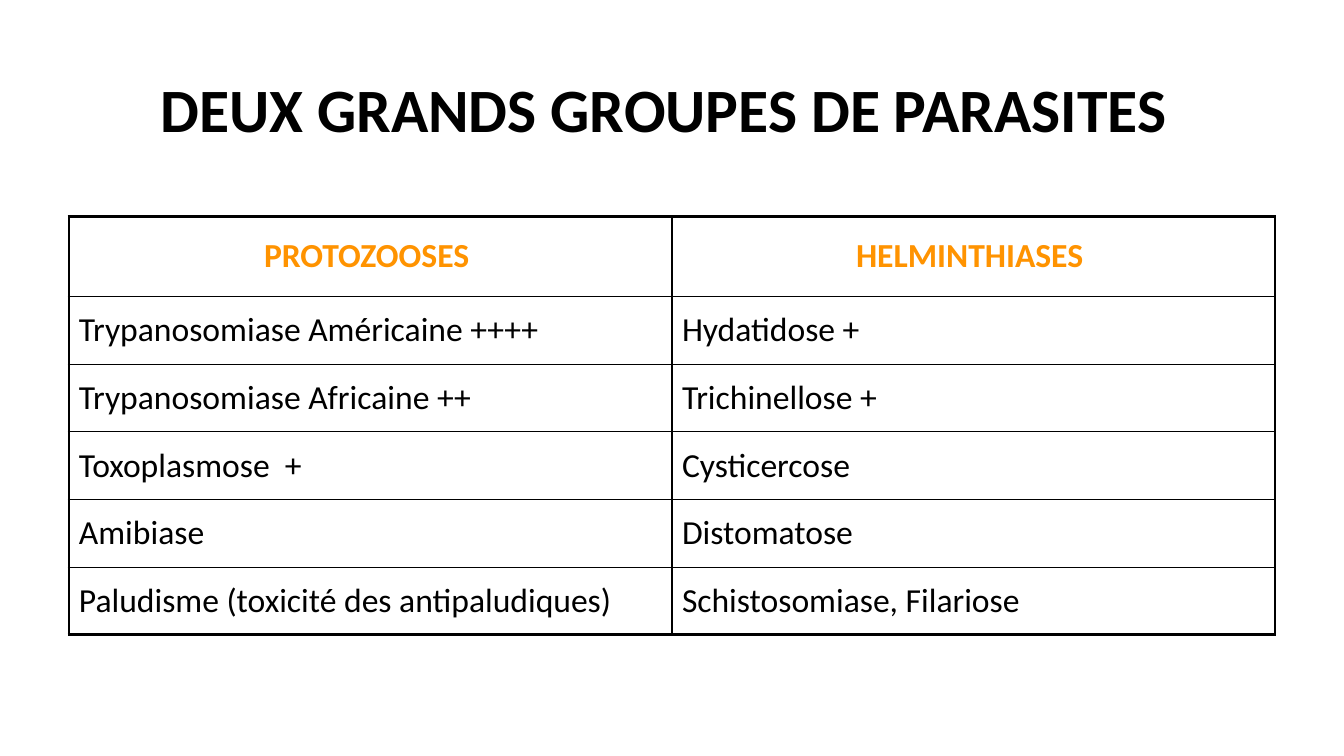
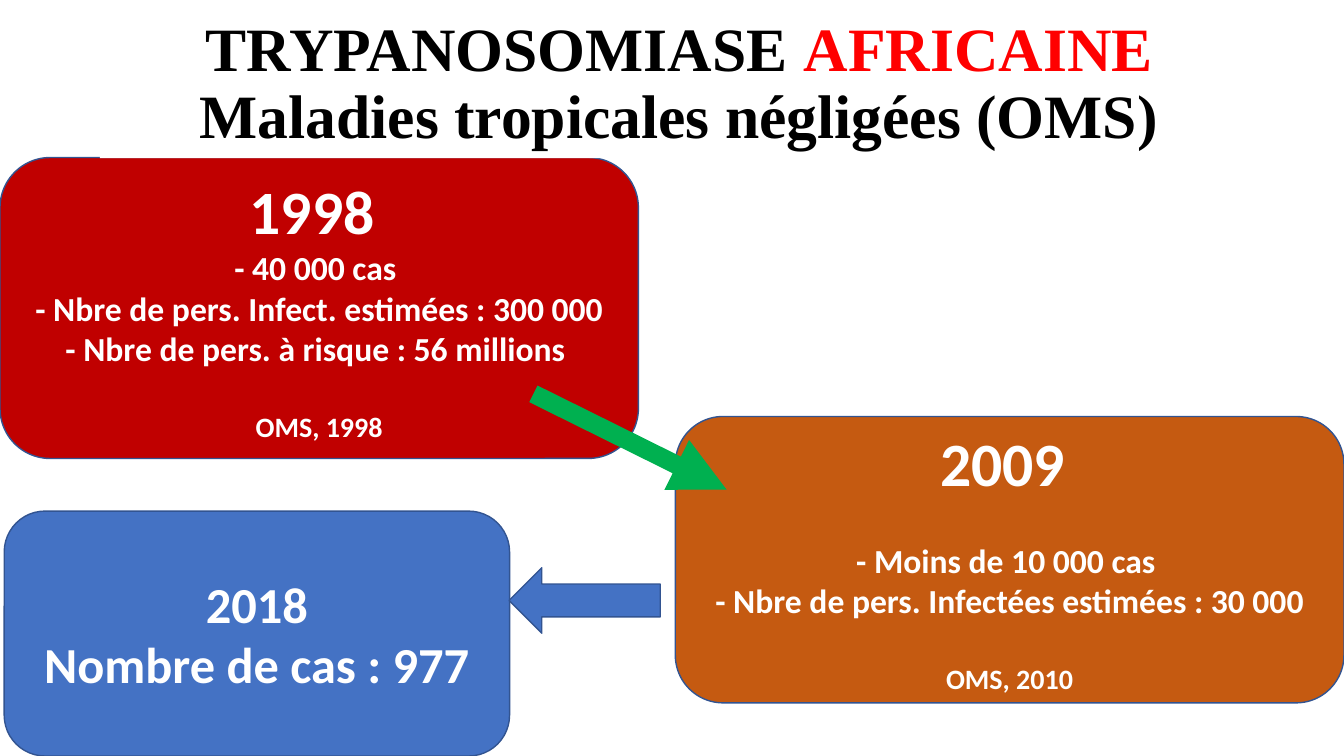
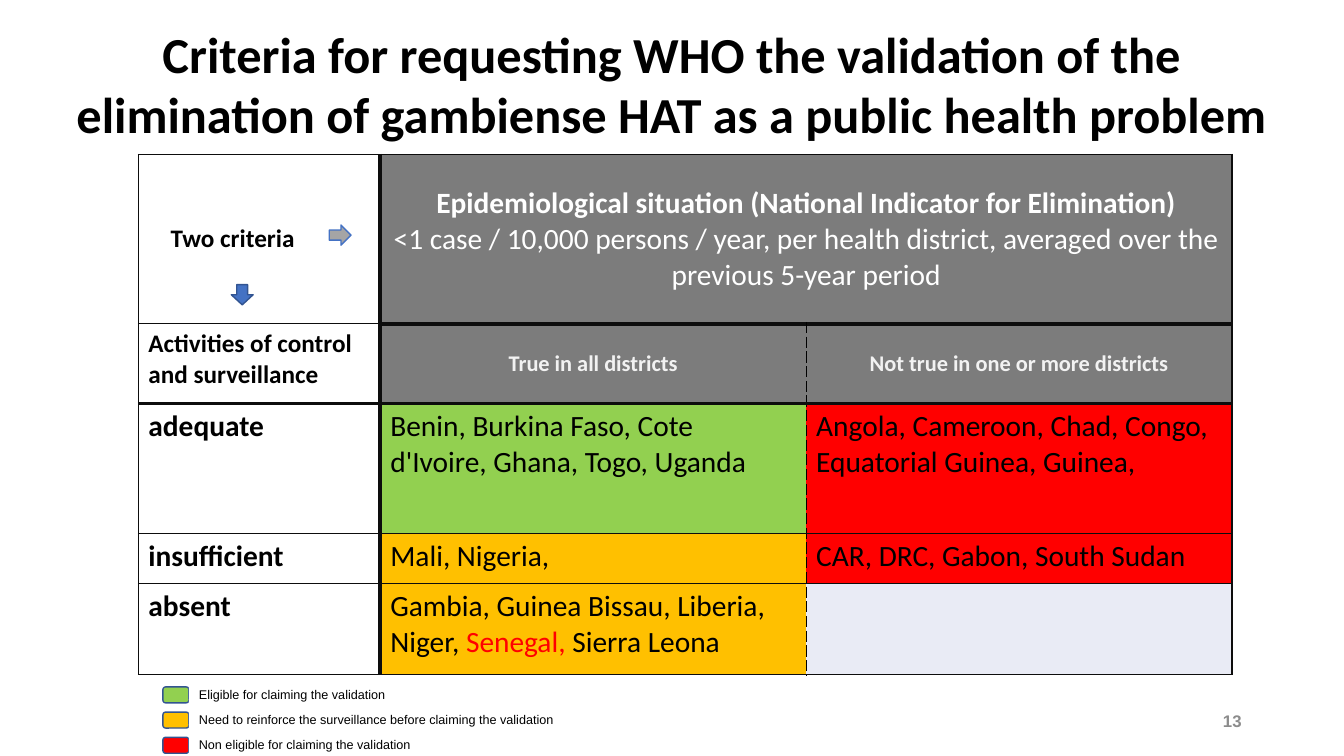
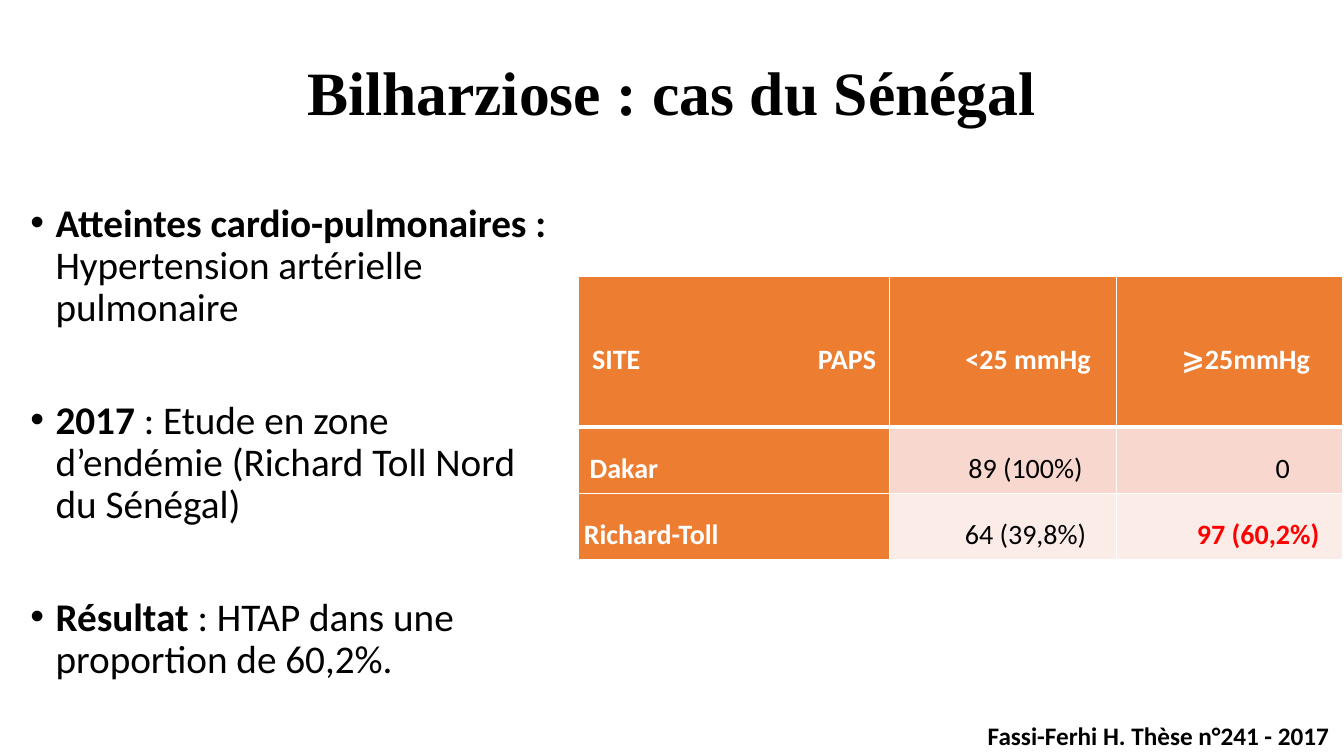
"""Build four slides on parasitic diseases."""
import dataclasses

import lxml.etree
import pptx
import pptx.dml.color
import pptx.enum.shapes
import pptx.enum.text
import pptx.oxml.ns
import pptx.util

Align = pptx.enum.text.PP_ALIGN
Anchor = pptx.enum.text.MSO_ANCHOR
Shape = pptx.enum.shapes.MSO_SHAPE


@dataclasses.dataclass(frozen=True)
class Theme:
    black: str = "000000"
    white: str = "FFFFFF"
    ink: str = "0D0D0D"
    outline: str = "325491"
    blue: str = "4472C4"
    silver: str = "A5A5A5"
    grey: str = "7C7C7C"
    number_grey: str = "8C8C8C"
    pale_grey: str = "F2F2F2"
    pale_blue: str = "E9EBF5"
    red: str = "FF0000"
    dark_red: str = "C00000"
    brown: str = "C55A11"
    arrow_green: str = "00B050"
    green: str = "92D050"
    amber: str = "FFC000"
    heading_orange: str = "FF9300"
    orange: str = "ED7D31"
    peach: str = "F8D7CE"
    pale_peach: str = "FCECE8"
    sans: str = "Calibri"
    serif: str = "Times New Roman"
    small_font: str = "Arial"
    title: float = 44
    subtitle: float = 36
    body: float = 28
    table: float = 24
    matrix: float = 21
    note: float = 20
    label: float = 18
    caption: float = 16
    number: float = 12
    legend: float = 9
    columns: int = 80


THEME = Theme()


@dataclasses.dataclass(frozen=True)
class Line:
    color: str
    width: float = 1
    dash: str = "solid"


@dataclasses.dataclass(frozen=True)
class Cell:
    content: object
    fill: str = THEME.white
    style: dict = dataclasses.field(default_factory=dict)
    anchor: object = Anchor.MIDDLE
    inset: tuple = (0.6, 0.3, 0.6, 0.3)
    span: int = 1
    top: object = None
    bottom: object = None


def rgb(color):
    return pptx.dml.color.RGBColor.from_string(color)


def add_xml(parent, tag, **attributes):
    name = pptx.oxml.ns.qn(tag)
    return lxml.etree.SubElement(parent, name, attributes)


def write(text_frame, content, **style):
    """Write paragraphs, each a text, a list of runs, or a (text, format) pair."""
    base = dict(size=THEME.label, font=THEME.sans, color=THEME.black, bold=False,
                align=Align.LEFT, spacing=1.0, before=0, bullet=None, tab=None)
    items = content if isinstance(content, list) else [content]
    for index, item in enumerate(items):
        text, own = item if isinstance(item, tuple) else (item, {})
        look = {**base, **style, **own}
        paragraph = text_frame.add_paragraph() if index else text_frame.paragraphs[0]
        properties = paragraph._p.get_or_add_pPr()
        if look["bullet"]:
            properties.set("marL", str(pptx.util.Inches(0.25)))
            properties.set("indent", str(-pptx.util.Inches(0.25)))
            add_xml(properties, "a:buFont", typeface=THEME.small_font)
            add_xml(properties, "a:buChar", char=look["bullet"])
        if look["tab"]:
            stops = add_xml(properties, "a:tabLst")
            add_xml(stops, "a:tab", pos=str(look["tab"]), algn="r")
        paragraph.alignment = look["align"]
        paragraph.line_spacing = look["spacing"]
        paragraph.space_before = pptx.util.Pt(look["before"])
        for part, change in text if isinstance(text, list) else [(text, {})]:
            if part == "\n":
                paragraph.add_line_break()
                continue
            run = paragraph.add_run()
            run.text = part
            form = {**look, **change}
            run.font.name = form["font"]
            run.font.size = pptx.util.Pt(form["size"])
            run.font.bold = form["bold"]
            run.font.color.rgb = rgb(form["color"])


class Deck:
    """Hold the presentation, its grid and the current slide."""

    def __init__(self):
        self.presentation = pptx.Presentation()
        self.presentation.slide_width = pptx.util.Inches(13.33)
        self.presentation.slide_height = pptx.util.Inches(7.5)
        self.unit = self.presentation.slide_width / THEME.columns
        self.slide = None

    def grid(self, *lengths):
        return [pptx.util.Emu(round(length * self.unit)) for length in lengths]

    def new_slide(self):
        layout = self.presentation.slide_layouts.get_by_name("Title Only")
        self.slide = self.presentation.slides.add_slide(layout)

    def title(self, content, place, anchor=Anchor.MIDDLE, **style):
        """Place the title in front of what is already on the slide."""
        title = self.slide.shapes.title
        title.left, title.top, title.width, title.height = self.grid(*place)
        title.fill.solid()
        title.fill.fore_color.rgb = rgb(THEME.white)
        title.text_frame.auto_size = pptx.enum.text.MSO_AUTO_SIZE.NONE
        title.text_frame.vertical_anchor = anchor
        form = dict(size=THEME.title, bold=True, align=Align.CENTER)
        write(title.text_frame, content, **{**form, **style})
        title.element.getparent().append(title.element)

    def text(self, content, place, anchor=Anchor.TOP, fill=None, **style):
        box = self.slide.shapes.add_textbox(*self.grid(*place))
        if fill:
            box.fill.solid()
            box.fill.fore_color.rgb = rgb(fill)
        box.text_frame.word_wrap = True
        box.text_frame.vertical_anchor = anchor
        write(box.text_frame, content, **style)

    def shape(self, kind, place, fill, content=None, line=THEME.outline, **style):
        shape = self.slide.shapes.add_shape(kind, *self.grid(*place))
        shape.shadow.inherit = False
        shape.fill.solid()
        shape.fill.fore_color.rgb = rgb(fill)
        shape.line.color.rgb = rgb(line)
        shape.line.width = pptx.util.Pt(1)
        if content:
            shape.text_frame.word_wrap = True
            shape.text_frame.vertical_anchor = Anchor.MIDDLE
            write(shape.text_frame, content, color=THEME.white, bold=True,
                  align=Align.CENTER, **style)

    def arrow(self, ends, color, width):
        straight = pptx.enum.shapes.MSO_CONNECTOR.STRAIGHT
        arrow = self.slide.shapes.add_connector(straight, *self.grid(*ends))
        arrow.line.color.rgb = rgb(color)
        arrow.line.width = pptx.util.Pt(width)
        add_xml(arrow.line._get_or_add_ln(), "a:tailEnd", type="triangle")
        add_xml(arrow.element.spPr, "a:effectLst")

    def table(self, corner, widths, heights, rows, across, down):
        """Add a table ruled by the lines across and down, edges included."""
        size = (sum(widths), sum(heights))
        frame = self.slide.shapes.add_table(len(heights), len(widths),
                                            *self.grid(*corner, *size))
        table = frame.table
        table.first_row = table.horz_banding = False
        for column, width in zip(table.columns, self.grid(*widths)):
            column.width = width
        for row, height in zip(table.rows, self.grid(*heights)):
            row.height = height
        for row, cells in enumerate(rows):
            column = 0
            for cell in cells:
                end = column + cell.span
                target = table.cell(row, column)
                if cell.span > 1:
                    target.merge(table.cell(row, end - 1))
                self.fill_cell(target, cell)
                self.rule_cell(target, L=down[column], R=down[end],
                               T=cell.top or across[row],
                               B=cell.bottom or across[row + 1])
                column = end

    def fill_cell(self, target, cell):
        target.fill.solid()
        target.fill.fore_color.rgb = rgb(cell.fill)
        target.vertical_anchor = cell.anchor
        (target.margin_left, target.margin_top,
         target.margin_right, target.margin_bottom) = self.grid(*cell.inset)
        if cell.content:
            write(target.text_frame, cell.content, **cell.style)

    def rule_cell(self, target, **lines):
        properties = target._tc.get_or_add_tcPr()
        for index, (side, line) in enumerate(lines.items()):
            border = add_xml(properties, f"a:ln{side}", w=str(pptx.util.Pt(line.width)))
            add_xml(add_xml(border, "a:solidFill"), "a:srgbClr", val=line.color)
            add_xml(border, "a:prstDash", val=line.dash)
            properties.insert(index, border)


def parasite_groups(deck):
    deck.new_slide()
    deck.title("DEUX GRANDS GROUPES DE PARASITES ", (8.2, 3.95, 63.5, 5), Anchor.TOP)
    heading = dict(size=THEME.table, color=THEME.heading_orange, bold=True,
                   align=Align.CENTER)
    diseases = [
        ("Trypanosomiase Américaine ++++", "Hydatidose +"),
        ("Trypanosomiase Africaine ++", "Trichinellose +"),
        ("Toxoplasmose  +", "Cysticercose"),
        ("Amibiase", "Distomatose"),
        ("Paludisme (toxicité des antipaludiques)", "Schistosomiase, Filariose"),
    ]
    rows = [[Cell(name, style=heading) for name in ("PROTOZOOSES ", "HELMINTHIASES ")]]
    rows += [[Cell(name, style=dict(size=THEME.table)) for name in pair]
             for pair in diseases]
    edge, inner = Line(THEME.black, 2.25), Line(THEME.black)
    deck.table((4.1, 12.9), [35.9] * 2, [4.75] + [4.03] * 5, rows,
               across=[edge] + [inner] * 5 + [edge], down=[edge, inner, edge])


def african_trypanosomiasis(deck):
    deck.new_slide()
    year, blank_line = dict(size=THEME.title), 29.3
    source = dict(size=THEME.note, before=blank_line)
    deck.shape(Shape.ROUNDED_RECTANGLE, (0, 9.38, 38, 17.92), THEME.dark_red, [
        ("1998 ", year),
        "- 40 000 cas ",
        "- Nbre de pers. Infect. estimées : 300 000",
        "- Nbre de pers. à risque : 56 millions ",
        ("OMS, 1998", source),
    ], size=THEME.table)
    deck.shape(Shape.ROUNDED_RECTANGLE, (40.2, 24.8, 39.8, 17.05), THEME.brown, [
        ("2009 ", year),
        ("- Moins de 10 000 cas ", dict(before=blank_line)),
        "- Nbre de pers. Infectées estimées : 30 000",
        ("OMS, 2010", source),
    ], size=THEME.table)
    deck.arrow((31.75, 23.45, 43.25, 29.15), THEME.arrow_green, 13.25)
    deck.title([([
        ("TRYPANOSOMIASE ", {}),
        ("AFRICAINE", dict(color=THEME.red)),
        ("\n", {}),
        ("Maladies tropicales négligées (OMS)", {}),
    ], {})], (5.95, 0.72, 69, 8.7), font=THEME.serif, spacing=0.9)
    deck.shape(Shape.ROUNDED_RECTANGLE, (0.25, 30.43, 30.08, 14.58), THEME.blue,
               ["2018", "Nombre de cas : 977"], size=THEME.subtitle)
    deck.shape(Shape.LEFT_ARROW, (30.3, 33.8, 9, 3.9), THEME.blue)


def elimination_criteria(deck):
    deck.new_slide()
    deck.title("Criteria for requesting WHO the validation of the elimination of "
               "gambiense HAT as a public health problem",
               (3.55, 1.07, 72.9, 7.9), Anchor.TOP, size=THEME.subtitle)
    thin, thick = Line(THEME.ink), Line(THEME.ink, 3)
    dashed = Line(THEME.black, 1, "sysDash")
    label = dict(size=THEME.label, bold=True)
    status = dict(size=THEME.matrix, bold=True)
    countries = dict(size=THEME.matrix)
    district = dict(size=THEME.caption, bold=True, color=THEME.pale_grey,
                    align=Align.CENTER)
    indicator = dict(size=THEME.matrix, color=THEME.white, align=Align.CENTER)
    rows = [
        [Cell("Two criteria", style=label, inset=(1.92, 0.3, 0.6, 0.3), bottom=thin),
         Cell([("Epidemiological situation (National Indicator for Elimination)",
                dict(bold=True)),
               "<1 case / 10,000 persons / year, per health district, "
               "averaged over the previous 5-year period"],
              THEME.grey, indicator, span=2)],
        [Cell("Activities of control and surveillance", style=label,
              anchor=Anchor.TOP, top=thin),
         Cell("True in all districts", THEME.grey, district),
         Cell("Not true in one or more districts", THEME.grey, district)],
    ]
    senegal = [([("Gambia, Guinea Bissau, Liberia, Niger, ", {}),
                 ("Senegal,", dict(color=THEME.red)),
                 (" Sierra Leona", {})], {})]
    findings = [
        ("adequate",
         "Benin, Burkina Faso, Cote d'Ivoire, Ghana, Togo, Uganda", THEME.green,
         "Angola, Cameroon, Chad, Congo, Equatorial Guinea, Guinea,", THEME.red),
        ("insufficient", "Mali, Nigeria,", THEME.amber,
         "CAR, DRC, Gabon, South Sudan", THEME.red),
        ("absent", senegal, THEME.amber, "", THEME.pale_blue),
    ]
    for name, true_in, true_fill, not_true, not_fill in findings:
        rows.append([Cell(name, style=status, anchor=Anchor.TOP),
                     Cell(true_in, true_fill, countries, Anchor.TOP),
                     Cell(not_true, not_fill, countries, Anchor.TOP)])
    deck.table((8.24, 9.2), [14.4, 25.35, 25.35], [10.08, 4.75, 7.72, 3, 5.4], rows,
               across=[thin, thick, thick, thin, thin, thin],
               down=[thin, thick, dashed, thin])
    deck.shape(Shape.RIGHT_ARROW, (19.6, 13.4, 1.3, 1.2), THEME.silver, line=THEME.blue)
    deck.shape(Shape.DOWN_ARROW, (13.77, 16.95, 1.3, 1.2), THEME.blue)
    legend = [
        (THEME.green, "Eligible for claiming the validation", 12.5),
        (THEME.amber, "Need to reinforce the surveillance before claiming the validation",
         24),
        (THEME.red, "Non eligible for claiming the validation", 16.7),
    ]
    for index, (color, meaning, width) in enumerate(legend):
        top = 40.6 + 1.5 * index
        deck.shape(Shape.ROUNDED_RECTANGLE, (9.7, top + 0.3, 1.55, 0.95), color)
        deck.text(meaning, (11.25, top, width, 1.45), fill=THEME.white,
                  size=THEME.legend, font=THEME.small_font)
    deck.text("13", (56.5, 41.7, 18, 2.4), Anchor.MIDDLE, size=THEME.number,
              font=THEME.small_font, color=THEME.number_grey, bold=True,
              align=Align.RIGHT)


def bilharzia_in_senegal(deck):
    deck.new_slide()
    deck.title("Bilharziose : cas du Sénégal", (16.2, 2.43, 47.6, 6.55),
               font=THEME.serif, spacing=0.9)
    strong = dict(bold=True)
    points = [
        ("Atteintes cardio-pulmonaires : ", "Hypertension artérielle pulmonaire"),
        ("2017", " : Etude en zone d’endémie (Richard Toll Nord du Sénégal)"),
        ("Résultat", " : HTAP dans une proportion de 60,2%."),
    ]
    deck.text([([(lead, strong), (rest, {})], dict(before=50 if index else 0))
               for index, (lead, rest) in enumerate(points)],
              (1.22, 11.8, 32.9, 30.85), fill=THEME.white, size=THEME.body,
              spacing=0.9, bullet="•")
    deck.text("Fassi-Ferhi H. Thèse n°241 - 2017", (58.2, 42.6, 21.8, 2.4),
              fill=THEME.white, bold=True)

    plain = dict(size=THEME.note, spacing=1.5)
    heading = dict(plain, bold=True, color=THEME.white)
    centred = dict(align=Align.CENTER)
    tab = deck.grid(16.9)[0]
    thin, thick = Line(THEME.white), Line(THEME.white, 3)

    def entry(text, fill, style, left, top=thin):
        return Cell(text, fill, style, inset=(left, 0, 0.3, 0), top=top)

    rows = [
        [entry("SITE\tPAPS", THEME.orange, dict(heading, tab=tab), 0.8),
         entry("<25 mmHg", THEME.orange, {**heading, **centred}, 3.3),
         entry("⩾25mmHg", THEME.orange, {**heading, **centred}, 2.2)],
        [entry("Dakar", THEME.orange, heading, 0.65),
         entry("89 (100%)", THEME.peach, {**plain, **centred}, 3),
         entry("0", THEME.peach, {**plain, **centred}, 6.6)],
        [entry("Richard-Toll", THEME.orange, heading, 0.3),
         entry("64 (39,8%)", THEME.pale_peach, {**plain, **centred}, 3),
         entry("97 (60,2%)", THEME.pale_peach,
               {**heading, **centred, "color": THEME.red}, 3.7)],
    ]
    deck.table((34.45, 16.45), [18.5, 13.5, 13.5], [8.98, 3.96, 3.96], rows,
               across=[thin, thick, thin, thin], down=[thin] * 4)


def main():
    deck = Deck()
    parasite_groups(deck)
    african_trypanosomiasis(deck)
    elimination_criteria(deck)
    bilharzia_in_senegal(deck)
    deck.presentation.save("out.pptx")


if __name__ == "__main__":
    main()
